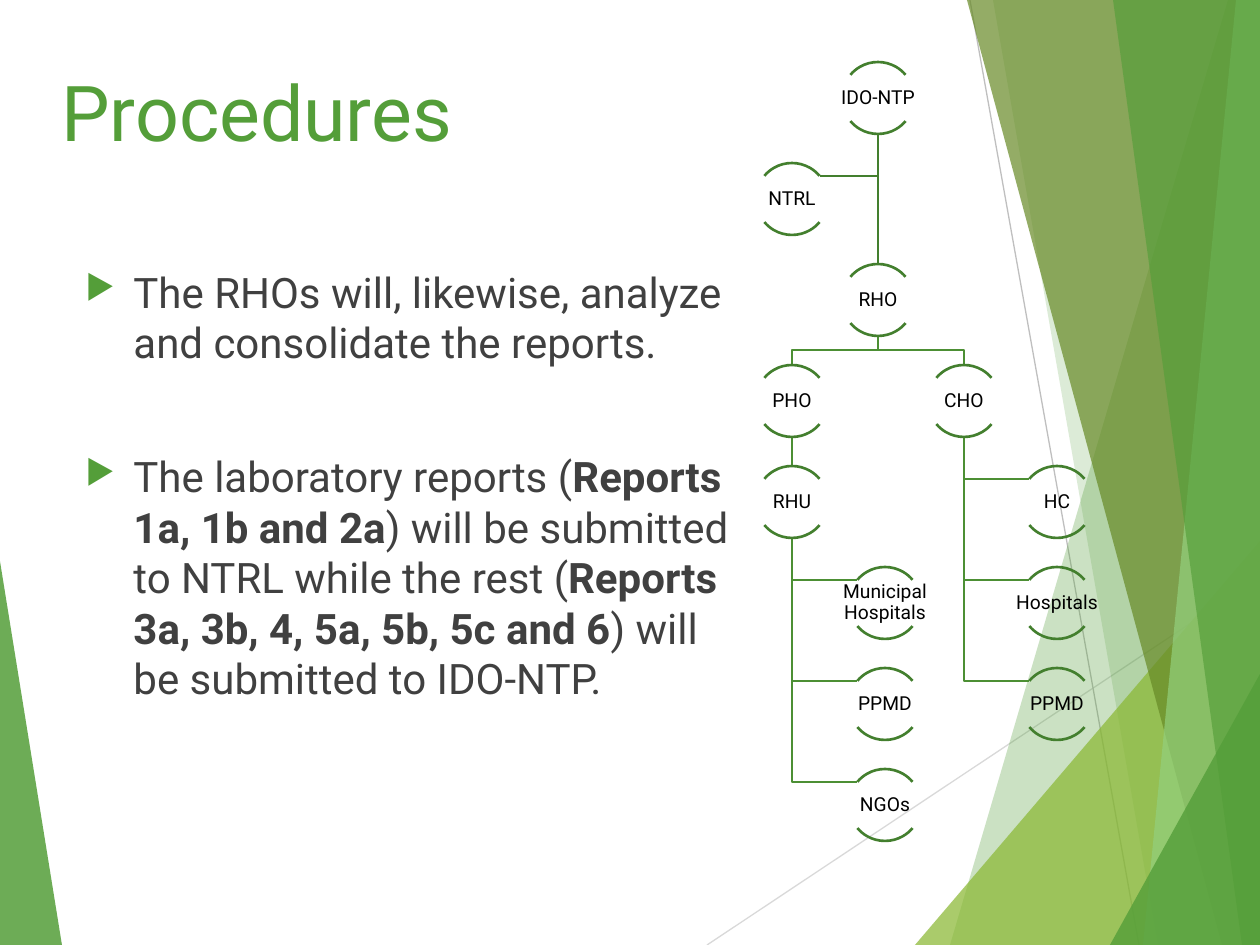
from lxml.etree import SubElement
from pptx import Presentation
from pptx.dml.color import RGBColor
from pptx.enum.shapes import MSO_CONNECTOR as Connector, MSO_SHAPE as Shape
from pptx.enum.text import MSO_ANCHOR as Anchor, PP_ALIGN as Align
from pptx.oxml.ns import qn
from pptx.util import Emu, Pt

SCALE = 914400 / 126
WIDTH, HEIGHT = 1260, 945
GREEN = RGBColor(0x54, 0x9E, 0x39)
LIME = RGBColor(0x8A, 0xB8, 0x33)
OLIVE = RGBColor(0x67, 0x8A, 0x26)
MINT = RGBColor(0x93, 0xD0, 0x7D)
DARK_GREEN = RGBColor(0x43, 0x7F, 0x2E)
BRANCH_GREEN = RGBColor(0x4C, 0x8F, 0x34)
PALE_GRAY = RGBColor(0xD9, 0xD9, 0xD9)
GRAY = RGBColor(0xBF, 0xBF, 0xBF)
CHARCOAL = RGBColor(0x40, 0x40, 0x40)
BLACK = RGBColor(0, 0, 0)

TOP_RIGHT, BOTTOM_RIGHT = (WIDTH, 0), (WIDTH, HEIGHT)
LEFT_FACET = [(0, 561), (62, HEIGHT), (0, HEIGHT)]
RIGHT_FACETS = [
    ((1228, 0), (950, HEIGHT), GREEN, 30),
    ((993, 0), (1158, HEIGHT), GREEN, 20),
    ((915, HEIGHT), (WIDTH, 541), LIME, 72),
    ((967, 0), (1222, HEIGHT), OLIVE, 70),
    ((1236, 0), (1143, HEIGHT), MINT, 70),
    ((1113, 0), (1242, HEIGHT), GREEN, 65),
    ((1110, HEIGHT), (WIDTH, 674), GREEN, 80),
]

CIRCLE, ARC_DROP, ARC_REACH = 72, 13, 28
FIRST_ROW, ROW_STEP = 62, 101
TRUNK, SPREAD, INDENT = 878, 86, 93
LEFT, RIGHT = TRUNK - SPREAD, TRUNK + SPREAD

OFFICES = [
    ("IDO-NTP", TRUNK, 0), ("RHO", TRUNK, 2), ("PHO", LEFT, 3), ("RHU", LEFT, 4),
    ("Municipal Hospitals", LEFT + INDENT, 5), ("PPMD", LEFT + INDENT, 6),
    ("NGOs", LEFT + INDENT, 7), ("CHO", RIGHT, 3), ("HC", RIGHT + INDENT, 4),
    ("Hospitals", RIGHT + INDENT, 5), ("PPMD", RIGHT + INDENT, 6), ("NTRL", LEFT, 1),
]

PROCEDURES = [
    [("The RHOs will, likewise, analyze and consolidate the reports.", False)],
    [("The laboratory reports (", False), ("Reports 1a, 1b and 2a", True),
     (") will be submitted to NTRL while the rest (", False),
     ("Reports 3a, 3b, 4, 5a, 5b, 5c and 6", True),
     (") will be submitted to IDO-NTP.", False)],
]


def px(length):
    return Emu(round(length * SCALE))


def row_top(row):
    return FIRST_ROW + ROW_STEP * row


def row_bottom(row):
    return row_top(row) + CIRCLE


def write(paragraph, text, *, size, color, bold=False):
    run = paragraph.add_run()
    run.text = text
    run.font.name = "Roboto"
    run.font.size = Pt(size)
    run.font.bold = bold
    run.font.color.rgb = color


class ProceduresSlide:
    def __init__(self, slide):
        self.shapes = slide.shapes

    def outline(self, points, close):
        builder = self.shapes.build_freeform(*points[0], scale=SCALE)
        builder.add_line_segments(points[1:], close=close)
        shape = builder.convert_to_shape()
        shape.shadow.inherit = False
        return shape

    def facet(self, points, color, opacity):
        facet = self.outline(points, True)
        facet.fill.solid()
        facet.fill.fore_color.rgb = color
        tint = facet.fill._xPr.find(qn("a:solidFill"))[0]
        SubElement(tint, qn("a:alpha"), val=str(opacity * 1000))
        facet.line.fill.background()

    def stroke(self, shape, color, weight=1.5):
        shape.line.color.rgb = color
        shape.line.width = Pt(weight)

    def line(self, start, end, color, weight=1.5):
        line = self.shapes.add_connector(
            Connector.STRAIGHT, *(px(value) for value in (*start, *end)))
        self.stroke(line, color, weight)
        SubElement(line._element.spPr, qn("a:effectLst"))

    def elbow(self, points, color):
        elbow = self.outline(points, False)
        elbow.fill.background()
        self.stroke(elbow, color)

    def text_box(self, left, top, width, height):
        box = self.shapes.add_textbox(px(left), px(top), px(width), px(height))
        box.text_frame.word_wrap = True
        return box.text_frame

    def office(self, name, center, row):
        top = row_top(row)
        for start, end in ((132, 192), (24, 84)):
            arc = self.shapes.add_shape(
                Shape.ARC, px(center - CIRCLE // 2), px(top), px(CIRCLE), px(CIRCLE))
            arc.adjustments[0], arc.adjustments[1] = start, end
            arc.shadow.inherit = False
            arc.fill.background()
            self.stroke(arc, DARK_GREEN)
        frame = self.text_box(center - 71, top + ARC_DROP, 142, 46)
        frame.margin_left = frame.margin_right = px(1)
        frame.margin_top = frame.margin_bottom = px(1)
        frame.vertical_anchor = Anchor.MIDDLE
        label = frame.paragraphs[0]
        label.alignment = Align.CENTER
        label.line_spacing = 0.9
        write(label, name, size=11, color=BLACK)

    def side_branch(self, trunk, parent_row, end, row, color):
        turn = row_top(row) + ARC_DROP
        self.elbow([(trunk, row_bottom(parent_row)), (trunk, turn), (end, turn)], color)

    def bullet(self, paragraph):
        properties = paragraph._p.get_or_add_pPr()
        properties.set("marL", str(px(48)))
        properties.set("indent", str(-px(48)))
        tint = SubElement(properties, qn("a:buClr"))
        SubElement(tint, qn("a:srgbClr"), val=str(GREEN))
        SubElement(properties, qn("a:buSzPct"), val="80000")
        SubElement(properties, qn("a:buChar"), char="▶")


def draw_background(page):
    page.facet(LEFT_FACET, GREEN, 85)
    page.line((707, HEIGHT), (WIDTH, 577), PALE_GRAY, 0.75)
    page.line((970, 0), (1139, HEIGHT), GRAY, 0.75)
    for start, end, color, opacity in RIGHT_FACETS:
        corners = [BOTTOM_RIGHT, TOP_RIGHT] if start[1] == 0 else [BOTTOM_RIGHT]
        page.facet([start, end, *corners], color, opacity)


def draw_procedures(page):
    title = page.text_box(49, 58, 874, 98)
    write(title.paragraphs[0], "Procedures", size=44, color=GREEN)
    body = page.text_box(73, 260, 672, 504)
    for index, procedure in enumerate(PROCEDURES):
        paragraph = body.add_paragraph() if index else body.paragraphs[0]
        if index:
            paragraph.space_before = Pt(48)
        page.bullet(paragraph)
        for text, bold in procedure:
            write(paragraph, text, size=24, color=CHARCOAL, bold=bold)


def draw_chart(page):
    page.side_branch(TRUNK, 0, LEFT + ARC_REACH, 1, DARK_GREEN)
    for trunk, parent_row in ((RIGHT, 3), (LEFT, 4)):
        for row in range(parent_row + 3, parent_row, -1):
            page.side_branch(trunk, parent_row, trunk + INDENT - ARC_REACH, row, BRANCH_GREEN)
    fork = (row_bottom(2) + row_top(3)) // 2
    for center in (RIGHT, LEFT):
        page.elbow([(TRUNK, row_bottom(2)), (TRUNK, fork),
                    (center, fork), (center, row_top(3))], BRANCH_GREEN)
    page.line((LEFT, row_bottom(3)), (LEFT, row_top(4)), BRANCH_GREEN)
    page.line((TRUNK, row_bottom(0)), (TRUNK, row_top(2)), DARK_GREEN)
    for name, center, row in OFFICES:
        page.office(name, center, row)


def main():
    deck = Presentation()
    deck.slide_width, deck.slide_height = px(WIDTH), px(HEIGHT)
    page = ProceduresSlide(deck.slides.add_slide(deck.slide_layouts[6]))
    draw_background(page)
    draw_procedures(page)
    draw_chart(page)
    deck.save("out.pptx")


if __name__ == "__main__":
    main()
